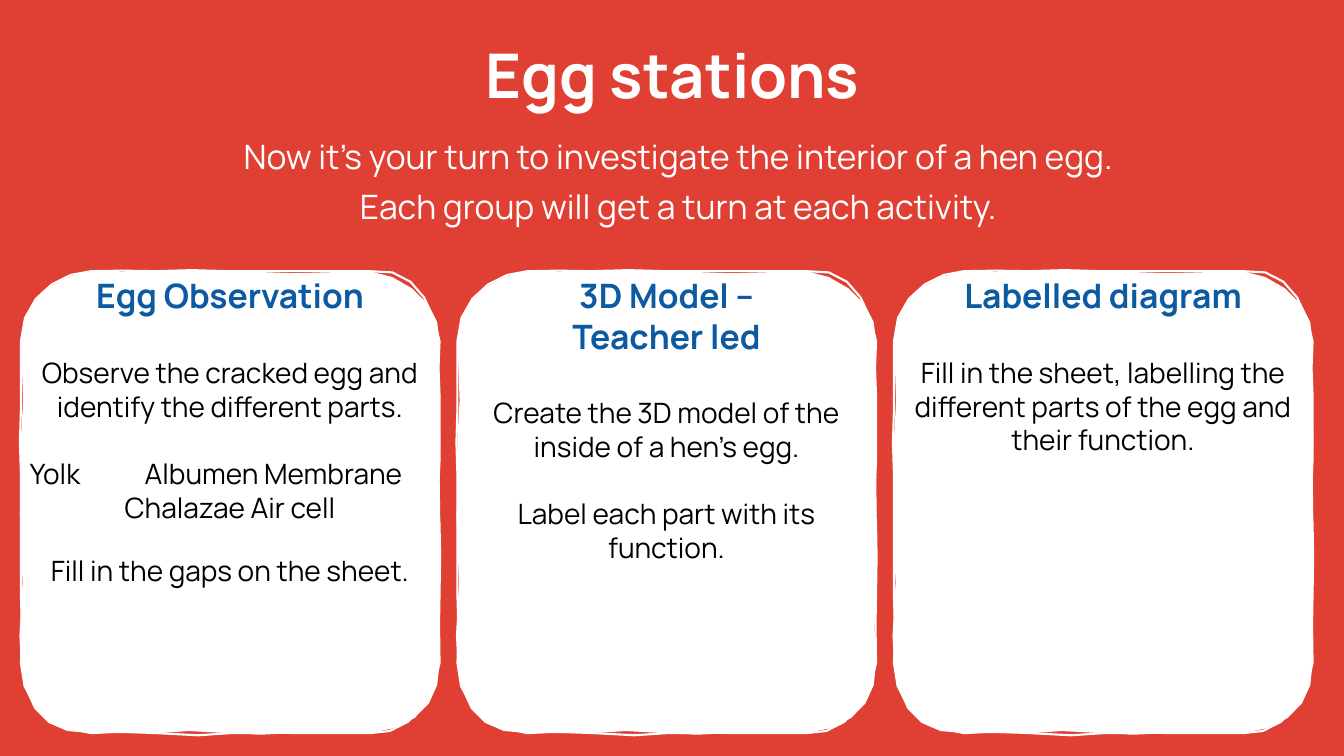
from pptx import Presentation
from pptx.dml.color import RGBColor
from pptx.enum.text import MSO_ANCHOR, PP_ALIGN
from pptx.util import Pt
from lxml.etree import SubElement
from pptx.oxml.ns import qn

# Content
TITLE = "Egg stations"
INTRO = [
    "Now it’s your turn to investigate the interior of a hen egg.",
    "Each group will get a turn at each activity.",
]
# Each station: heading lines, then body lines as (text, space before)
STATIONS = [
    (["Egg Observation"], [
        ("Observe the cracked egg and identify the different parts.", 28.7),
        ("Yolk\tAlbumen Membrane", 24),
        ("Chalazae Air cell", 0),
        ("Fill in the gaps on the sheet.", 21.5),
    ]),
    (["3D Model –", "Teacher led"], [
        ("Create the 3D model of the inside of a hen's egg.", 28.7),
        ("Label each part with its function.", 24),
    ]),
    (["Labelled diagram"], [
        ("Fill in the sheet, labelling the different parts of the egg and their function.", 28.7),
    ]),
]

COLORS = {"background": "E03F33", "card": "FFFFFF", "intro": "FFFFFF",
          "heading": "0B5AA2", "body": "000000"}
FONT = "Manrope"

# Hand-drawn card edges: cubic curves (two handles, end point) from CARD_START
CARD_LEFT, CARD_TOP, CARD_STEP = 15, 193.7, 311.8
CARD_START = (0, 50)
CARD_FILL = [
    (2, 21, 22, 4, 50, 0), (63, 1, 80, 0, 102, 0), (123, 0, 141, 0, 153, 0),
    (166, 0, 220, 4, 249, 0), (277, 3, 301, 27, 299, 50), (300, 65, 297, 78, 299, 96),
    (301, 114, 298, 129, 299, 142), (300, 155, 299, 181, 299, 192),
    (299, 204, 300, 222, 299, 234), (297, 246, 298, 261, 299, 280),
    (300, 308, 282, 327, 249, 330), (224, 331, 220, 329, 195, 330),
    (171, 331, 170, 332, 148, 330), (125, 328, 113, 328, 98, 330),
    (82, 332, 60, 328, 50, 330), (19, 331, 2, 314, 0, 280),
    (-1, 270, -2, 252, 0, 241), (2, 230, 1, 217, 0, 197),
    (-1, 178, -1, 166, 0, 158), (1, 150, -1, 132, 0, 119), (1, 106, 3, 84, 0, 50),
]
CARD_OUTLINE = [
    (0, 20, 26, 1, 50, 0), (60, -2, 84, 1, 96, 0), (108, -1, 136, -1, 148, 0),
    (158, 1, 185, -1, 199, 0), (213, 1, 238, -1, 249, 0), (279, -4, 294, 21, 299, 50),
    (298, 60, 298, 78, 299, 89), (299, 99, 299, 116, 299, 135),
    (298, 154, 297, 167, 299, 181), (301, 195, 298, 212, 299, 230),
    (300, 246, 297, 257, 299, 280), (295, 310, 274, 332, 249, 330),
    (230, 331, 216, 329, 203, 330), (190, 331, 166, 328, 149, 330),
    (133, 333, 122, 331, 98, 330), (73, 329, 63, 328, 50, 330),
    (27, 328, -1, 310, 0, 280), (1, 265, 1, 252, 0, 232),
    (-1, 212, 1, 206, 0, 190), (-1, 174, 1, 164, 0, 146),
    (-1, 129, -1, 116, 0, 98), (1, 80, -1, 70, 0, 50),
]
CORNER_STEPS, EDGE_STEPS = 5, 2
YOLK_TAB = 82

prs = Presentation()
prs.slide_width, prs.slide_height = Pt(960), Pt(540)
slide = prs.slides.add_slide(prs.slide_layouts[6])


def rgb(name):
    return RGBColor.from_string(COLORS[name])


def curve_points(curves):
    """Walk along the cubic curves, in finer steps round the corners."""
    x0, y0 = CARD_START
    for x1, y1, x2, y2, x3, y3 in curves:
        is_corner = x0 != x3 and y0 != y3
        steps = CORNER_STEPS if is_corner else EDGE_STEPS
        for step in range(1, steps + 1):
            t = step / steps
            u = 1 - t
            a, b, c, d = u ** 3, 3 * u * u * t, 3 * u * t * t, t ** 3
            yield a * x0 + b * x1 + c * x2 + d * x3, a * y0 + b * y1 + c * y2 + d * y3
        x0, y0 = x3, y3


def add_card_path(left, curves):
    def place(point):
        return Pt(left + point[0]), Pt(CARD_TOP + point[1])

    builder = slide.shapes.build_freeform(*place(CARD_START))
    builder.add_line_segments([place(p) for p in curve_points(curves)], close=True)
    path_shape = builder.convert_to_shape()
    path_shape.shadow.inherit = False
    return path_shape


def add_line(frame, text, size, color, bold=False, before=0, spacing=None):
    first = not frame.paragraphs[0].runs
    line = frame.paragraphs[0] if first else frame.add_paragraph()
    line.alignment = PP_ALIGN.CENTER
    line.space_before = Pt(0 if first else before)
    if spacing:
        line.line_spacing = spacing
    if "\t" in text:
        line.alignment = PP_ALIGN.LEFT
        tabs = SubElement(line._p.get_or_add_pPr(), qn("a:tabLst"))
        SubElement(tabs, qn("a:tab"), pos=str(Pt(YOLK_TAB)), algn="l")
    run = line.add_run()
    run.text = text
    run.font.name, run.font.size, run.font.bold = FONT, Pt(size), bold
    run.font.color.rgb = rgb(color)


def add_text_area(left, top, width, height, anchor):
    frame = slide.shapes.add_textbox(Pt(left), Pt(top), Pt(width), Pt(height)).text_frame
    frame.word_wrap = True
    frame.vertical_anchor = anchor
    return frame


# Background
slide.background.fill.solid()
slide.background.fill.fore_color.rgb = rgb("background")

# Title and introduction
title = add_text_area(263, 3.6, 435, 104.4, MSO_ANCHOR.MIDDLE)
add_line(title, TITLE, 44, "intro", bold=True, spacing=0.9)
intro = add_text_area(15, 96.5, 939, 73, MSO_ANCHOR.TOP)
for sentence in INTRO:
    add_line(intro, sentence, 24, "intro", before=10, spacing=0.9)

# Station cards
for index, (headings, body) in enumerate(STATIONS):
    card_left = CARD_LEFT + index * CARD_STEP
    card = add_card_path(card_left, CARD_FILL)
    card.fill.solid()
    card.fill.fore_color.rgb = rgb("card")
    card.line.fill.background()

    outline = add_card_path(card_left, CARD_OUTLINE)
    outline.fill.background()
    outline.line.color.rgb = rgb("card")
    outline.line.width = Pt(1.5)

    station = outline.text_frame
    station.word_wrap = True
    station.vertical_anchor = MSO_ANCHOR.TOP
    for heading in headings:
        add_line(station, heading, 24, "heading", bold=True)
    for text, gap in body:
        add_line(station, text, 20, "body", before=gap)

prs.save("out.pptx")
